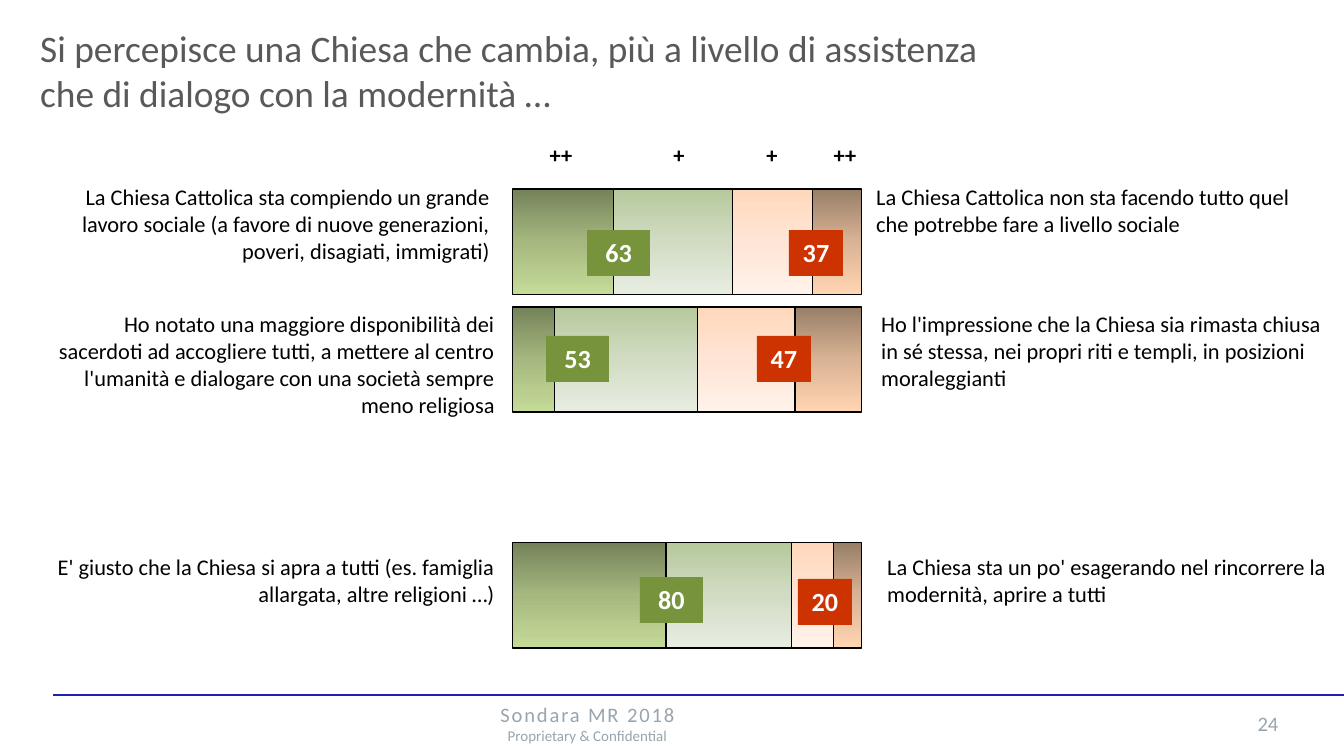
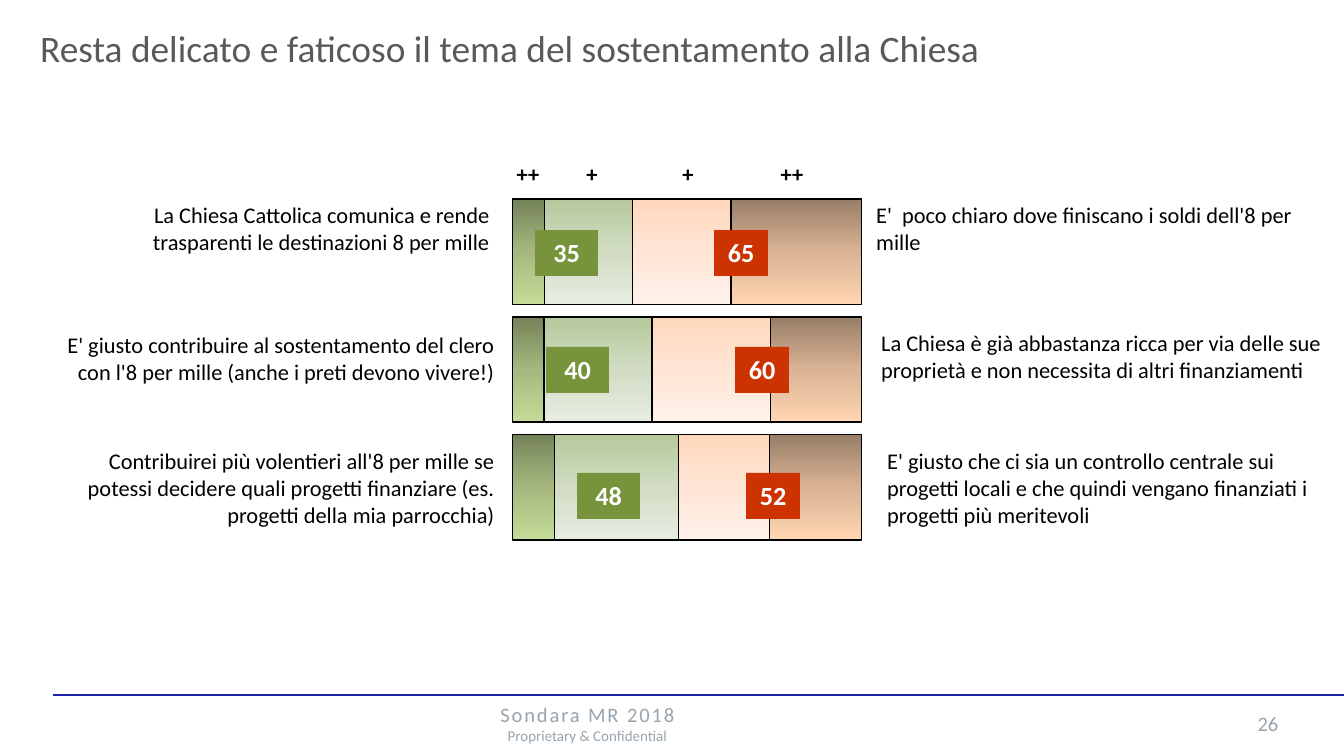
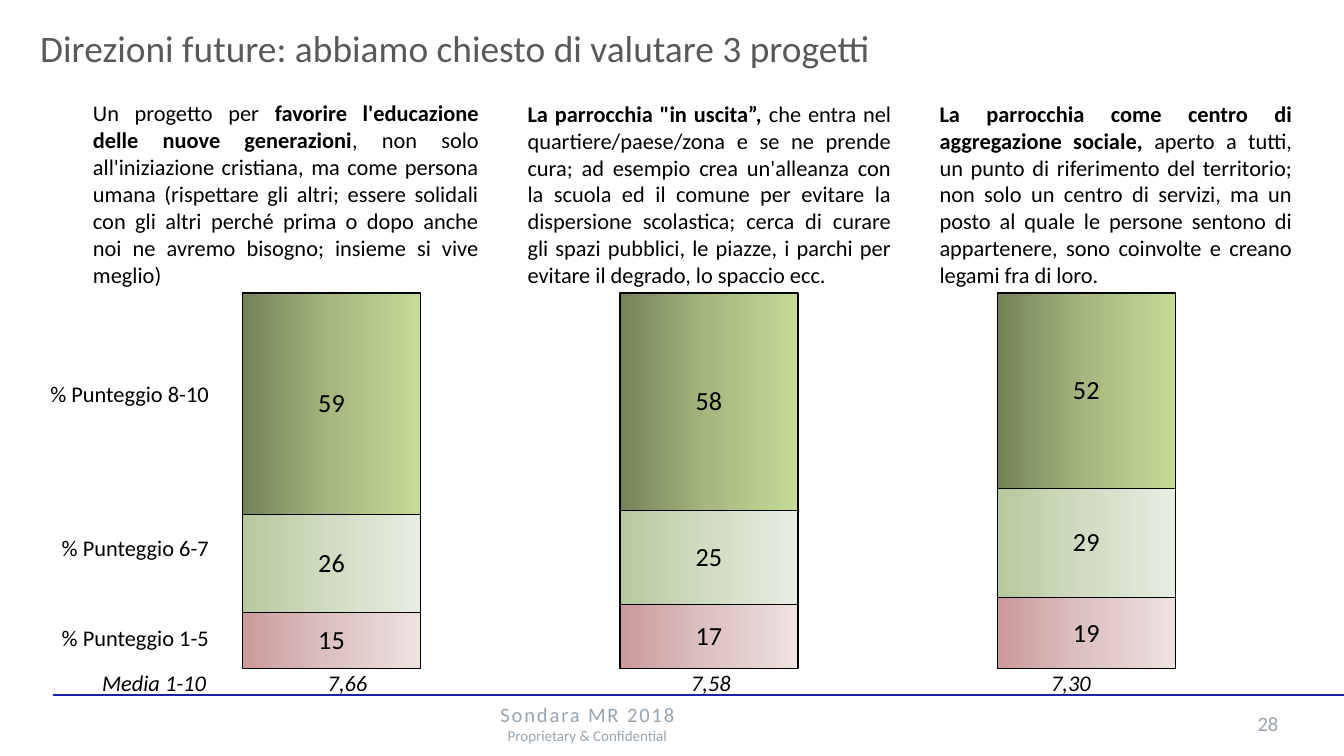
from dataclasses import dataclass

import pptx
import pptx.chart.data
import pptx.dml.color
import pptx.enum.chart
import pptx.enum.shapes
import pptx.enum.text
import pptx.oxml
import pptx.oxml.ns
import pptx.util

ALIGN = pptx.enum.text.PP_ALIGN
ANCHOR = pptx.enum.text.MSO_ANCHOR
CHART = pptx.enum.chart.XL_CHART_TYPE
SHAPE = pptx.enum.shapes.MSO_SHAPE
RGB = pptx.dml.color.RGBColor.from_string
qn = pptx.oxml.ns.qn
EMU_PER_PX = 914400 / 134.4
NO_GRID_STYLE = "{2D5ABB26-0587-4C30-8999-92F81FD0307C}"


@dataclass(frozen=True)
class Theme:
    font: str = "Calibri"
    ink: str = "000000"
    title: str = "595959"
    footer: str = "98A4AE"
    rule: str = "1E22AA"
    agree: str = "77933C"
    disagree: str = "CC3300"
    on_badge: str = "FFFFFF"
    strong_green: tuple = ("748259", "A6B87F", "C5DB97")
    pale_green: tuple = ("B6C99C", "D1DCC3", "E8EDE2")
    pale_orange: tuple = ("FFD8BC", "FFE5D5", "FFF2EA")
    strong_orange: tuple = ("987E68", "D9B394", "FFD5B2")
    pale_red: tuple = ("CB9A9A", "DDC2C2", "EEE2E1")
    title_size: int = 20
    chart_size: int = 18
    value_size: int = 14
    body_size: int = 12
    footer_size: int = 11
    small_size: int = 8


@dataclass
class Statement:
    """A pair of opposite opinions; each side is (text, top, line count)."""
    left: tuple
    right: tuple
    right_width: int
    agree: tuple      # value, x, y
    disagree: tuple   # value, x, y


theme = Theme()


def px(*lengths):
    return [pptx.util.Emu(round(length * EMU_PER_PX)) for length in lengths]


def write(frame, *runs, size=theme.body_size, color=theme.ink, bold=False, italic=False,
          align=ALIGN.LEFT, line_spacing=None, tracking=None, margin=None,
          anchor=ANCHOR.TOP, wrap=True, grow=False):
    """Add one paragraph; a run is a string or a (string, bold) pair."""
    frame.word_wrap = wrap
    frame.vertical_anchor = anchor
    if grow:
        frame.auto_size = pptx.enum.text.MSO_AUTO_SIZE.SHAPE_TO_FIT_TEXT
    if margin is not None:
        frame.margin_left = frame.margin_right = frame.margin_top = frame.margin_bottom = margin
    paragraph = frame.add_paragraph() if frame.text else frame.paragraphs[0]
    paragraph.alignment = align
    if line_spacing:
        paragraph.line_spacing = line_spacing
    for piece in runs:
        text, heavy = (piece, bold) if isinstance(piece, str) else piece
        run = paragraph.add_run()
        run.text = text
        run.font.name = theme.font
        run.font.size = pptx.util.Pt(size)
        run.font.bold = heavy
        run.font.italic = italic
        run.font.color.rgb = RGB(color)
        if tracking:
            run.font._element.set("spc", str(tracking * 100))


opinion_fills = (theme.strong_green, theme.pale_green, theme.pale_orange, theme.strong_orange)
opinion_chart = dict(kind=CHART.BAR_STACKED_100, fills=opinion_fills, gap=12, angle=270,
                     plot=(0.053, 0.021, 0.902, 0.942), labels=False)

pages = [
    dict(
        number="24", title_height=103,
        title="Si percepisce una Chiesa che cambia, più a livello di assistenza "
              "che di dialogo con la modernità …",
        chart=dict(opinion_chart, box=(492, 167, 387, 751), values=(
            (29, 12, None, 44, None, None), (34, 41, None, 36, None, None),
            (23, 28, None, 12, None, None), (14, 19, None, 8, None, None))),
        scale_top=145, scale_centers=(561, 679, 772, 845),
        statements=(
            Statement(("La Chiesa Cattolica sta compiendo un grande lavoro sociale (a favore di "
                       "nuove generazioni, poveri, disagiati, immigrati)", 177, 3),
                      ("La Chiesa Cattolica non sta facendo tutto quel che potrebbe fare a "
                       "livello sociale", 177, 2),
                      465, ("63", 587, 230), ("37", 789, 230)),
            Statement(("Ho notato una maggiore disponibilità dei sacerdoti ad accogliere tutti, "
                       "a mettere al centro l'umanità e dialogare con una società sempre meno "
                       "religiosa", 304, 4),
                      ("Ho l'impressione che la Chiesa sia rimasta chiusa in sé stessa, nei "
                       "propri riti e templi, in posizioni moraleggianti", 304, 3),
                      470, ("53", 546, 336), ("47", 757, 336)),
            Statement(("E' giusto che la Chiesa si apra a tutti (es. famiglia allargata, altre "
                       "religioni …)", 547, 2),
                      ("La Chiesa sta un po' esagerando nel rincorrere la modernità, aprire a "
                       "tutti", 547, 2),
                      470, ("80", 640, 577), ("20", 798, 579)),
        ),
    ),
    dict(
        number="26", title_height=59,
        title="Resta delicato e faticoso il tema del sostentamento alla Chiesa",
        chart=dict(opinion_chart, box=(492, 177, 387, 751), values=(
            (9, 9, 12, None, None, None), (25, 31, 35, None, None, None),
            (28, 34, 26, None, None, None), (37, 26, 26, None, None, None))),
        scale_top=164, scale_centers=(528, 592, 688, 792),
        statements=(
            Statement(("La Chiesa Cattolica comunica e rende trasparenti le destinazioni 8 per "
                       "mille", 195, 2),
                      ("E'  poco chiaro dove finiscano i soldi dell'8 per mille", 195, 2),
                      445, ("35", 535, 230), ("65", 714, 230)),
            Statement(("E' giusto contribuire al sostentamento del clero con l'8 per mille "
                       "(anche i preti devono vivere!)", 325, 2),
                      ("La Chiesa è già abbastanza ricca per via delle sue proprietà e non "
                       "necessita di altri finanziamenti", 323, 2),
                      470, ("40", 546, 347), ("60", 735, 347)),
            Statement(("Contribuirei più volentieri all'8 per mille se potessi decidere quali "
                       "progetti finanziare (es. progetti della mia parrocchia)", 441, 3),
                      ("E' giusto che ci sia un controllo centrale sui progetti locali e che "
                       "quindi vengano finanziati i progetti più meritevoli", 441, 3),
                      470, ("48", 577, 473), ("52", 746, 473)),
        ),
    ),
    dict(
        number="28", title_height=59,
        title="Direzioni future: abbiamo chiesto di valutare 3 progetti",
        chart=dict(kind=CHART.COLUMN_STACKED_100, box=(90, 282, 1232, 406), gap=112, angle=0,
                   fills=(theme.strong_green, theme.pale_green, theme.pale_red),
                   plot=(0.043, 0.027, 0.919, 0.926), labels=True,
                   values=((59, 58, 52), (26, 25, 29), (15, 17, 19))),
        scale_top=0, scale_centers=(), statements=(),
    ),
]

deck = pptx.Presentation()
deck.slide_width, deck.slide_height = px(1344, 756)

for page in pages:
    slide = deck.slides.add_slide(deck.slide_layouts[6])
    shapes = slide.shapes

    # Footer and title
    write(shapes.add_textbox(*px(1202, 704, 132, 30)).text_frame, page["number"],
          size=theme.footer_size, color=theme.footer, align=ALIGN.CENTER)
    footer = shapes.add_textbox(*px(249, 706, 677, 35)).text_frame
    for line, size, tracking in (("Sondara MR 2018", theme.footer_size, 1),
                                 ("Proprietary & Confidential", theme.small_size, None)):
        write(footer, line, size=size, tracking=tracking, color=theme.footer,
              align=ALIGN.CENTER, anchor=ANCHOR.MIDDLE)
    rule = shapes.add_connector(pptx.enum.shapes.MSO_CONNECTOR.STRAIGHT, *px(53, 695, 1344, 695))
    rule.line.color.rgb = RGB(theme.rule)
    rule.line.width = pptx.util.Pt(0.75)
    rule._element.spPr.append(pptx.oxml.parse_xml(
        f'<a:effectLst {pptx.oxml.ns.nsdecls("a")}/>'))
    write(shapes.add_textbox(*px(27, 19, 984, page["title_height"])).text_frame, page["title"],
          size=theme.title_size, color=theme.title, grow=True)

    # Stacked chart
    chart_plan = page["chart"]
    data = pptx.chart.data.CategoryChartData()
    data.categories = [str(n + 1) for n in range(len(chart_plan["values"][0]))]
    for n, values in enumerate(chart_plan["values"], 1):
        data.add_series(f"Series {n}", values)
    chart = shapes.add_chart(chart_plan["kind"], *px(*chart_plan["box"]), data).chart
    chart.has_legend = chart.has_title = False
    chart.font.name = theme.font
    chart.font.size = pptx.util.Pt(theme.chart_size)
    chart.font.color.rgb = RGB(theme.ink)
    horizontal = chart_plan["kind"] == CHART.BAR_STACKED_100
    chart.category_axis.reverse_order = horizontal
    chart.value_axis.reverse_order = not horizontal
    chart.value_axis.has_major_gridlines = False
    chart.category_axis.visible = chart.value_axis.visible = False
    bars = chart.plots[0]
    bars.gap_width, bars.overlap, bars.vary_by_categories = chart_plan["gap"], 100, False

    plot_area = chart._chartSpace.chart.plotArea
    for old_layout in plot_area.findall(qn("c:layout")):
        plot_area.remove(old_layout)
    sizes = "".join(f'<c:{tag} val="{value}"/>'
                    for tag, value in zip("xywh", chart_plan["plot"]))
    plot_area.insert(0, pptx.oxml.parse_xml(
        f'<c:layout {pptx.oxml.ns.nsdecls("c")}><c:manualLayout><c:layoutTarget val="inner"/>'
        f'<c:xMode val="edge"/><c:yMode val="edge"/>{sizes}</c:manualLayout></c:layout>'))

    for series, colors in zip(bars.series, chart_plan["fills"]):
        series.format.fill.gradient()
        series.format.fill.gradient_angle = chart_plan["angle"]
        stops = next(series._element.iter(qn("a:gsLst")))
        stops.getparent().replace(stops, pptx.oxml.parse_xml(
            f'<a:gsLst {pptx.oxml.ns.nsdecls("a")}>' + "".join(
                f'<a:gs pos="{n * 50000}"><a:srgbClr val="{color}"/></a:gs>'
                for n, color in enumerate(colors)) + "</a:gsLst>"))
        series.format.line.color.rgb = RGB(theme.ink)
        series.format.line.width = pptx.util.Pt(0.75)
        if chart_plan["labels"]:
            labels = series.data_labels
            labels.show_value = True
            labels.number_format, labels.number_format_is_linked = "0", False
            labels.font.name = theme.font
            labels.font.size = pptx.util.Pt(theme.value_size)
            labels.font.color.rgb = RGB(theme.ink)

    # Agreement scale above the bars
    for sign, width, center in zip(("++", "+", "+", "++"), (93, 52, 11, 93),
                                   page["scale_centers"]):
        box = px(center - width / 2, page["scale_top"], width, 23)
        write(shapes.add_textbox(*box).text_frame, sign, bold=True, align=ALIGN.CENTER,
              line_spacing=0.85, margin=0, wrap=width > 11, grow=True)

    # Opposite statements with their totals
    for statement, (left_x, left_width), right_x in zip(
            page["statements"], ((42, 461), (27, 481), (27, 481)), (863, 868, 874)):
        for (text, top, lines), x, width, align in (
                (statement.left, left_x, left_width, ALIGN.RIGHT),
                (statement.right, right_x, statement.right_width, ALIGN.LEFT)):
            write(shapes.add_textbox(*px(x, top, width, 14 + 27 * lines)).text_frame, text,
                  align=align, grow=True)
        for (total, x, y), width, color in ((statement.agree, 63, theme.agree),
                                            (statement.disagree, 54, theme.disagree)):
            badge = shapes.add_shape(SHAPE.RECTANGLE, *px(x, y, width, 46))
            badge.shadow.inherit = False
            badge.fill.solid()
            badge.fill.fore_color.rgb = RGB(color)
            badge.line.fill.background()
            write(badge.text_frame, total, size=theme.value_size, color=theme.on_badge,
                  bold=True, align=ALIGN.CENTER, grow=True)

# Project descriptions and score tables on the last slide
shapes = deck.slides[2].shapes
projects = (
    ((69, 82, 434, 222),
     ("Un progetto per ", ("favorire l'educazione delle nuove generazioni", True),
      ", non solo all'iniziazione cristiana, ma come persona umana (rispettare gli altri; essere "
      "solidali con gli altri perché prima o dopo anche noi ne avremo bisogno; insieme si vive "
      "meglio)")),
    ((503, 82, 413, 233),
     (('La parrocchia "in uscita”, ', True),
      "che entra nel quartiere/paese/zona e se ne prende cura; ad esempio crea un'alleanza con la "
      "scuola ed il comune per evitare la dispersione scolastica; cerca di curare gli spazi "
      "pubblici, le piazze, i parchi per evitare il degrado, lo spaccio ecc.")),
    ((915, 82, 402, 233),
     (("La parrocchia come centro di aggregazione sociale,", True),
      " aperto a tutti, un punto di riferimento del territorio; non solo un centro di servizi, ma "
      "un posto al quale le persone sentono di appartenere, sono coinvolte e creano legami fra "
      "di loro.")),
)
for box, description in projects:
    project = shapes.add_shape(SHAPE.ROUNDED_RECTANGLE, *px(*box))
    project.shadow.inherit = False
    project.fill.background()
    project.line.fill.background()
    write(project.text_frame, *description, align=ALIGN.JUSTIFY)

score_bands = dict(
    origin=(0, 293), widths=(218,), heights=(202, 106, 74), margins=(9, 0),
    rows=(("% Punteggio 8-10",), ("% Punteggio 6-7",), ("% Punteggio 1-5",)),
    format=dict(line_spacing=1.07))
averages = dict(
    origin=(0, 664), widths=(207, 281, 446, 274), heights=(39,), margins=(1, 1),
    rows=(("Media 1-10", "7,66", "7,58", "7,30"),), format=dict(italic=True))

for scores in (score_bands, averages):
    widths, heights = scores["widths"], scores["heights"]
    table = shapes.add_table(len(heights), len(widths), *px(
        *scores["origin"], sum(widths), sum(heights))).table
    table.first_row = table.horz_banding = False
    next(table._tbl.iter(qn("a:tableStyleId"))).text = NO_GRID_STYLE
    for column, width in zip(table.columns, px(*widths)):
        column.width = width
    for row, height, texts in zip(table.rows, px(*heights), scores["rows"]):
        row.height = height
        for n, (cell, text) in enumerate(zip(row.cells, texts)):
            cell.fill.background()
            cell.vertical_anchor = ANCHOR.MIDDLE
            side, top = px(*scores["margins"])
            cell.margin_left = cell.margin_right = side
            cell.margin_top, cell.margin_bottom = top, 0
            write(cell.text_frame, text, align=ALIGN.CENTER if n else ALIGN.RIGHT,
                  **scores["format"])

deck.save("out.pptx")
